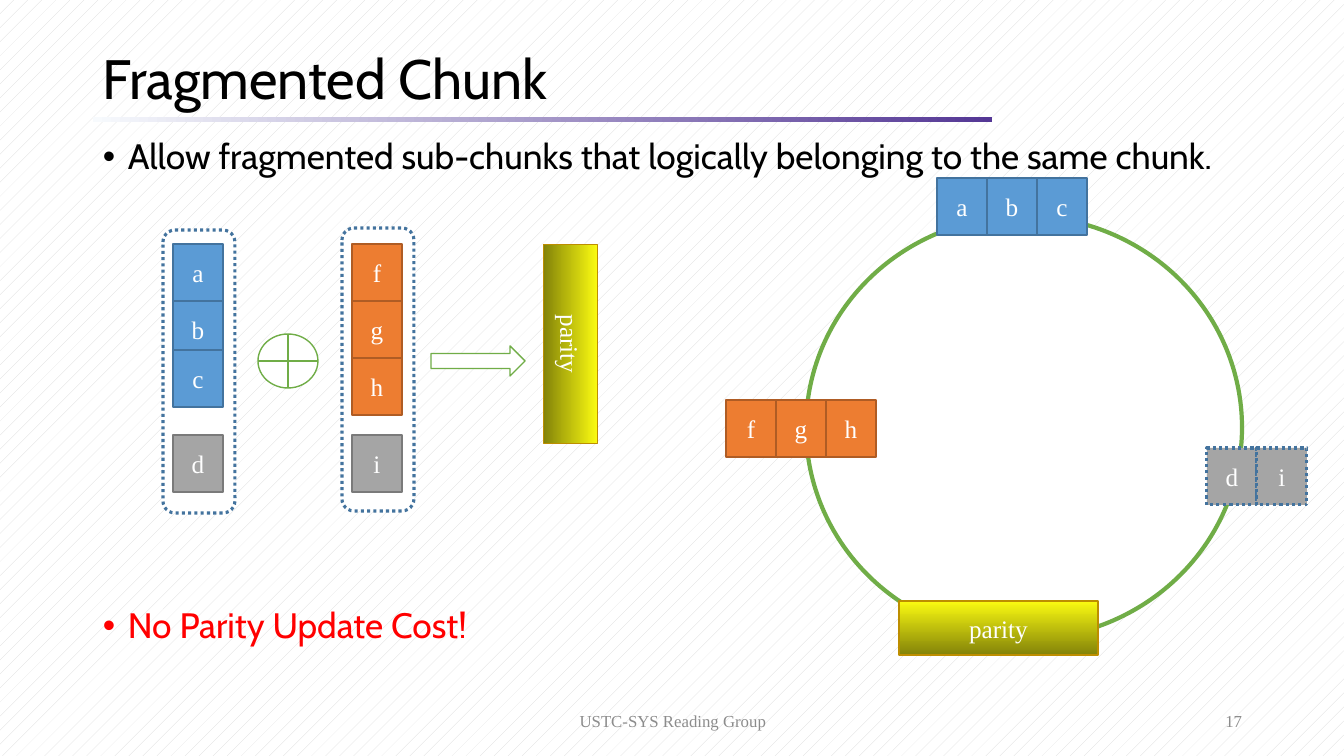
from lxml.etree import SubElement
from pptx import Presentation
from pptx.dml.color import RGBColor
from pptx.enum.dml import MSO_LINE, MSO_PATTERN
from pptx.enum.shapes import MSO_SHAPE as SHAPE
from pptx.enum.text import MSO_ANCHOR as ANCHOR, PP_ALIGN as ALIGN
from pptx.oxml.ns import qn
from pptx.util import Pt

EMU_PER_PX = 914400 / 100.8
CELL_WIDTH, CELL_HEIGHT = 50, 57
HEADING_FONT, LABEL_FONT = "Cabin", "Times New Roman"
WHITE, BLACK, RED, FOOTER_GRAY = "FFFFFF", "000000", "FF0000", "8C8C8C"
DOTTED = {"line": "43739E", "width": 2.25, "dash": MSO_LINE.ROUND_DOT}
GREEN_OUTLINE = {"fill": WHITE, "line": "70AD47"}
BLUE = {"fill": "5B9BD5", "line": "43739E"}
ORANGE = {"fill": "ED7D31", "line": "AF5C24"}
GRAY = {"fill": "A5A5A5", "line": "7A7A7A"}
GRAY_DOTTED = {"fill": "A5A5A5", **DOTTED}
PARITY = {"fill": ("FBFB11", "838309"), "angle": 270, "line": "BD8E00"}


def px(length):
    return round(length * EMU_PER_PX)


def color(value):
    return RGBColor.from_string(value)


def write(shape, text, anchor=ANCHOR.MIDDLE, align=ALIGN.CENTER, **font_values):
    """Put one run of text in the shape and return its paragraph."""
    frame = shape.text_frame
    frame.word_wrap = True
    frame.vertical_anchor = anchor
    paragraph = frame.paragraphs[0]
    paragraph.alignment = align
    run = paragraph.add_run()
    run.text = text
    values = {"name": LABEL_FONT, "size": 18, "color": WHITE, **font_values}
    run.font.color.rgb = color(values.pop("color"))
    values["size"] = Pt(values["size"])
    for name, value in values.items():
        setattr(run.font, name, value)
    return paragraph


def add_text(slide, box, text, **values):
    return write(slide.shapes.add_textbox(*map(px, box)), text, **values)


def add_shape(slide, kind, box, fill, line=None, width=1, dash=None, angle=0, text=None):
    """Draw a preset shape; a pair of fill colours makes a gradient."""
    shape = slide.shapes.add_shape(kind, *map(px, box))
    shape.shadow.inherit = False
    if isinstance(fill, tuple):
        shape.fill.gradient()
        shape.fill.gradient_angle = angle
        for stop, value, position in zip(shape.fill.gradient_stops, fill, (0, 1)):
            stop.color.rgb = color(value)
            stop.position = position
    else:
        shape.fill.solid()
        shape.fill.fore_color.rgb = color(fill)
    if line:
        shape.line.color.rgb = color(line)
        shape.line.width = Pt(width)
        if dash:
            shape.line.dash_style = dash
    else:
        shape.line.fill.background()
    if text:
        write(shape, text)
    return shape


def add_cell(slide, left, top, text, style):
    add_shape(slide, SHAPE.RECTANGLE, (left, top, CELL_WIDTH, CELL_HEIGHT), text=text, **style)


def add_cell_row(slide, left, top, letters, style):
    for index, letter in enumerate(letters):
        add_cell(slide, left + index * CELL_WIDTH, top, letter, style)


def add_background(slide):
    fill = slide.background.fill
    fill.patterned()
    fill.pattern = MSO_PATTERN.PERCENT_5
    fill.fore_color.rgb = color("D9D9D9")
    fill.back_color.rgb = color(WHITE)


def add_title(slide, left, top, width, height):
    paragraph = add_text(slide, (left, top, width, height), "Fragmented Chunk",
                         align=ALIGN.LEFT, name=HEADING_FONT, size=39.6, color=BLACK)
    paragraph.line_spacing = 0.9
    add_shape(slide, SHAPE.RECTANGLE, (left, top + 74, 899, 5), fill=("F7FAFD", "543795"))


def add_bullet(slide, box, text, text_color):
    paragraph = add_text(slide, box, text, anchor=ANCHOR.TOP, align=ALIGN.LEFT,
                         name=HEADING_FONT, size=25.2, color=text_color)
    properties = paragraph._p.get_or_add_pPr()
    properties.set("marL", str(px(25)))
    properties.set("indent", str(-px(25)))
    SubElement(properties, qn("a:buFont"), typeface="Arial")
    SubElement(properties, qn("a:buChar"), char="•")
    paragraph.line_spacing = 0.9


def add_chunk(slide, left, top, cells):
    """Draw a dotted frame around a column of (letter, offset, style) cells."""
    add_shape(slide, SHAPE.ROUNDED_RECTANGLE, (left, top, 72, 283), fill=WHITE, **DOTTED)
    for letter, offset, style in cells:
        add_cell(slide, left + 10, top + offset, letter, style)


def add_parity_equation(slide, left, top):
    add_chunk(slide, left, top + 2, [
        ("a", 14, BLUE), ("b", 71, BLUE), ("c", 120, BLUE), ("d", 205, GRAY)])
    add_chunk(slide, left + 179, top, [
        ("f", 16, ORANGE), ("g", 73, ORANGE), ("h", 130, ORANGE), ("i", 207, GRAY)])
    add_shape(slide, SHAPE.FLOWCHART_OR, (left + 95, top + 106, 60, 54), **GREEN_OUTLINE)
    add_shape(slide, SHAPE.RIGHT_ARROW, (left + 268, top + 118, 94, 30), **GREEN_OUTLINE)
    parity = add_shape(slide, SHAPE.RECTANGLE, (left + 308, top + 89, 199, 54),
                       text="parity", **PARITY)
    parity.rotation = 90


def add_ring(slide, left, top, width, height):
    add_shape(slide, SHAPE.OVAL, (left, top, width, height), width=3, **GREEN_OUTLINE)
    add_cell_row(slide, left - 80, top + 184, "fgh", ORANGE)
    add_cell_row(slide, left + 131, top - 38, "abc", BLUE)
    add_cell_row(slide, left + 401, top + 232, "di", GRAY_DOTTED)
    add_shape(slide, SHAPE.RECTANGLE, (left + 93, top + 385, 199, 54), text="parity", **PARITY)


def add_footer(slide, left, top, width, height):
    style = {"size": 12, "color": FOOTER_GRAY}
    add_text(slide, (left + 353, top, 454, height), "USTC-SYS Reading Group", **style)
    add_text(slide, (left + width - 302, top, 302, height), "17", align=ALIGN.RIGHT, **style)


def main():
    presentation = Presentation()
    presentation.slide_width, presentation.slide_height = px(1344), px(756)
    slide = presentation.slides.add_slide(presentation.slide_layouts[6])
    add_background(slide)
    add_title(slide, 93, 43, 1159, 76)
    add_bullet(slide, (93, 134, 1210, 50),
               "Allow fragmented sub-chunks that logically belonging to the same chunk.", BLACK)
    add_bullet(slide, (93, 603, 1210, 50), "No Parity Update Cost!", RED)
    add_footer(slide, 93, 701, 1159, 40)
    add_ring(slide, 806, 216, 436, 423)
    add_parity_equation(slide, 163, 228)
    presentation.save("out.pptx")


if __name__ == "__main__":
    main()
